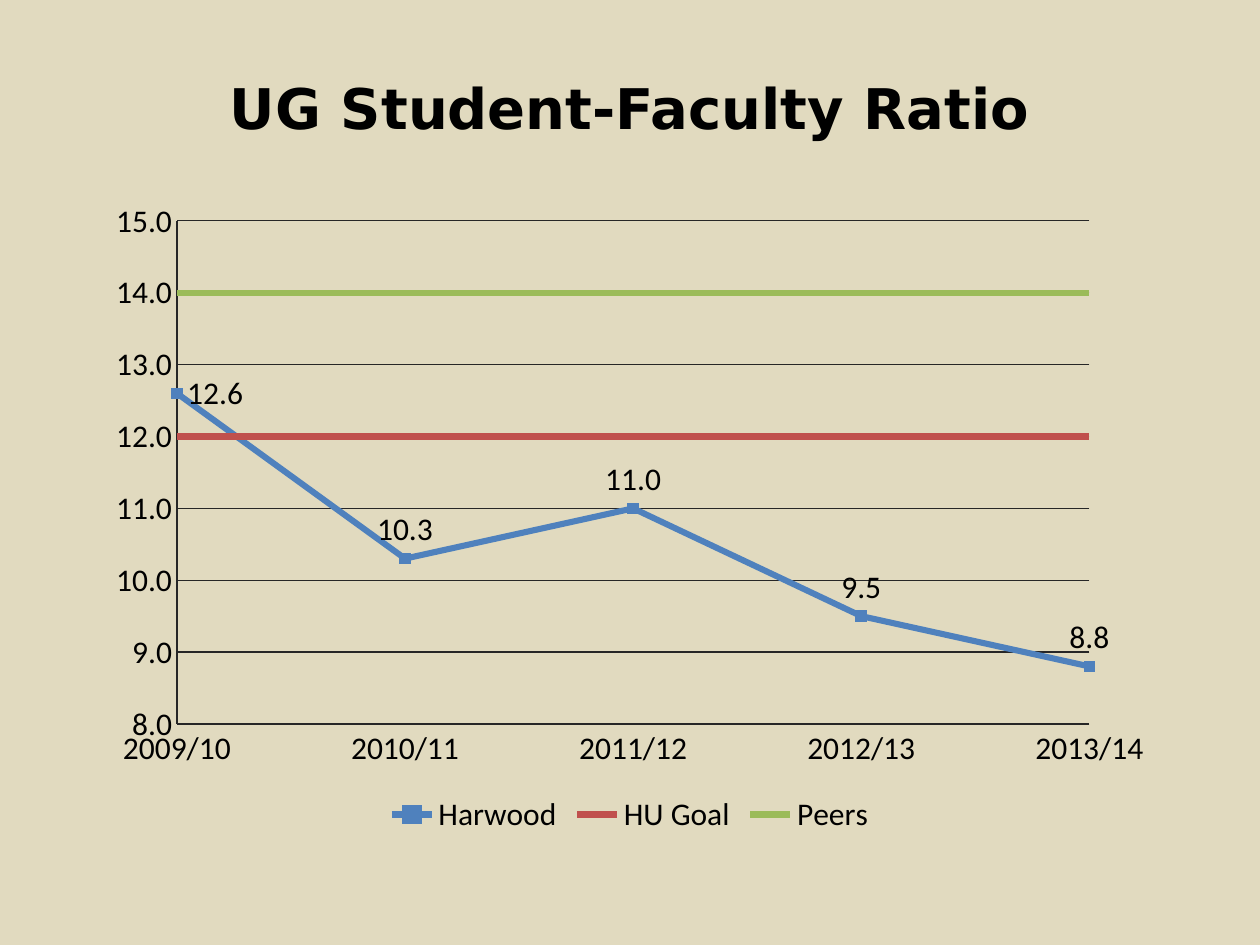
from dataclasses import dataclass

from lxml.etree import SubElement
from pptx import Presentation
from pptx.chart.data import CategoryChartData
from pptx.dml.color import RGBColor
from pptx.enum.chart import XL_CHART_TYPE as ChartType
from pptx.enum.chart import XL_LABEL_POSITION as LabelPosition
from pptx.enum.chart import XL_LEGEND_POSITION as LegendPosition
from pptx.enum.chart import XL_MARKER_STYLE as MarkerStyle
from pptx.enum.chart import XL_TICK_MARK as TickMark
from pptx.enum.text import MSO_ANCHOR as Anchor
from pptx.enum.text import PP_ALIGN as Align
from pptx.oxml.ns import qn
from pptx.util import Pt


@dataclass(frozen=True)
class Theme:
    """Colours, fonts and type sizes of the slide."""

    background: str = "E1DABF"
    text: str = "000000"
    axis: str = "262626"
    series: tuple = ("4F81BD", "C0504D", "9BBB59")
    title_font: str = "DejaVu Sans"
    chart_font: str = "Calibri"
    title_size: int = 32
    chart_size: int = 18
    axis_width: float = 0.75
    series_width: float = 3.5
    marker_size: int = 6


THEME = Theme()
YEARS = ("2009/10", "2010/11", "2011/12", "2012/13", "2013/14")
RATIOS = {
    "Harwood": (12.6, 10.3, 11, 9.5, 8.8),
    "HU Goal": (12,) * len(YEARS),
    "Peers": (14,) * len(YEARS),
}
PLOT_LAYOUT = {"x": 0.077, "y": 0.049, "w": 0.852, "h": 0.773}


def style_font(font, name, size):
    """Apply a typeface, size and the text colour."""
    font.name = name
    font.size = Pt(size)
    font.color.rgb = RGBColor.from_string(THEME.text)


def style_line(line, color, width):
    """Apply a solid colour and width to a line."""
    line.color.rgb = RGBColor.from_string(color)
    line.width = Pt(width)


def replace_child(parent, tag, previous):
    """Put a fresh chart element after the previous one, or first."""
    for old in parent.findall(qn(tag)):
        parent.remove(old)
    child = SubElement(parent, qn(tag))
    if previous is None:
        parent.insert(0, child)
    else:
        previous.addnext(child)
    return child


def add_title(slide, text, left, top, width, height):
    """Fill the title placeholder and place it in the box."""
    title = slide.shapes.title
    title.left, title.top, title.width, title.height = map(Pt, (left, top, width, height))
    frame = title.text_frame
    frame.text = text
    frame.word_wrap = True
    frame.vertical_anchor = Anchor.BOTTOM
    paragraph = frame.paragraphs[0]
    paragraph.alignment = Align.CENTER
    font = paragraph.runs[0].font
    style_font(font, THEME.title_font, THEME.title_size)
    font.bold = True


def style_axes(chart):
    """Set the scale, gridlines and lines of both axes."""
    values = chart.value_axis
    values.minimum_scale, values.maximum_scale, values.major_unit = 8, 15, 1
    values.has_major_gridlines = True
    values.tick_labels.number_format = "0.0"
    values.tick_labels.number_format_is_linked = False
    style_line(values.major_gridlines.format.line, THEME.axis, THEME.axis_width)
    for axis in (chart.category_axis, values):
        axis.major_tick_mark = axis.minor_tick_mark = TickMark.NONE
        style_line(axis.format.line, THEME.axis, THEME.axis_width)
    value_xml = chart._chartSpace.find(".//" + qn("c:valAx"))
    crossing = replace_child(value_xml, "c:crossBetween", value_xml.find(qn("c:crosses")))
    crossing.set("val", "midCat")


def style_series(chart):
    """Colour the lines and mark and label the first of them."""
    for series, color in zip(chart.plots[0].series, THEME.series):
        series.smooth = False
        style_line(series.format.line, color, THEME.series_width)
        series.marker.style = MarkerStyle.NONE
    ratio = chart.plots[0].series[0]
    ratio.marker.style = MarkerStyle.SQUARE
    ratio.marker.size = THEME.marker_size
    ratio.marker.format.fill.solid()
    ratio.marker.format.fill.fore_color.rgb = RGBColor.from_string(THEME.series[0])
    style_line(ratio.marker.format.line, THEME.series[0], THEME.axis_width)
    labels = ratio.data_labels
    labels.show_value = True
    labels.number_format = "0.0"
    labels.number_format_is_linked = False
    labels.position = LabelPosition.ABOVE
    style_font(labels.font, THEME.chart_font, THEME.chart_size)
    first_label = ratio.points[0].data_label
    style_font(first_label.font, THEME.chart_font, THEME.chart_size)
    first_label.position = LabelPosition.RIGHT


def set_plot_layout(chart):
    """Fix the inner plot area as fractions of the chart box."""
    plot_area = chart._chartSpace.find(".//" + qn("c:plotArea"))
    layout = replace_child(plot_area, "c:layout", None)
    manual = SubElement(layout, qn("c:manualLayout"))
    settings = {"layoutTarget": "inner", "xMode": "edge", "yMode": "edge", **PLOT_LAYOUT}
    for name, value in settings.items():
        SubElement(manual, qn(f"c:{name}")).set("val", str(value))


def add_ratio_chart(slide, left, top, width, height):
    """Draw the ratio line chart in the box."""
    data = CategoryChartData(number_format="0.0")
    data.categories = YEARS
    for name, values in RATIOS.items():
        data.add_series(name, values)
    box = map(Pt, (left, top, width, height))
    chart = slide.shapes.add_chart(ChartType.LINE_MARKERS, *box, data).chart
    chart.has_title = False
    style_font(chart.font, THEME.chart_font, THEME.chart_size)
    chart.has_legend = True
    chart.legend.position = LegendPosition.BOTTOM
    chart.legend.include_in_layout = False
    chart.plots[0].vary_by_categories = False
    style_axes(chart)
    style_series(chart)
    set_plot_layout(chart)


def add_ratio_slide(presentation, left, top, width):
    """Build the slide with its title above its chart."""
    slide = presentation.slides.add_slide(presentation.slide_layouts[5])
    fill = slide.background.fill
    fill.solid()
    fill.fore_color.rgb = RGBColor.from_string(THEME.background)
    add_title(slide, "UG Student-Faculty Ratio", left, top, width, 54)
    add_ratio_chart(slide, left, top + 78, width, 372)


def main():
    """Create and save the presentation."""
    presentation = Presentation()
    presentation.slide_width, presentation.slide_height = Pt(720), Pt(540)
    add_ratio_slide(presentation, 54, 30, 612)
    presentation.save("out.pptx")


if __name__ == "__main__":
    main()
